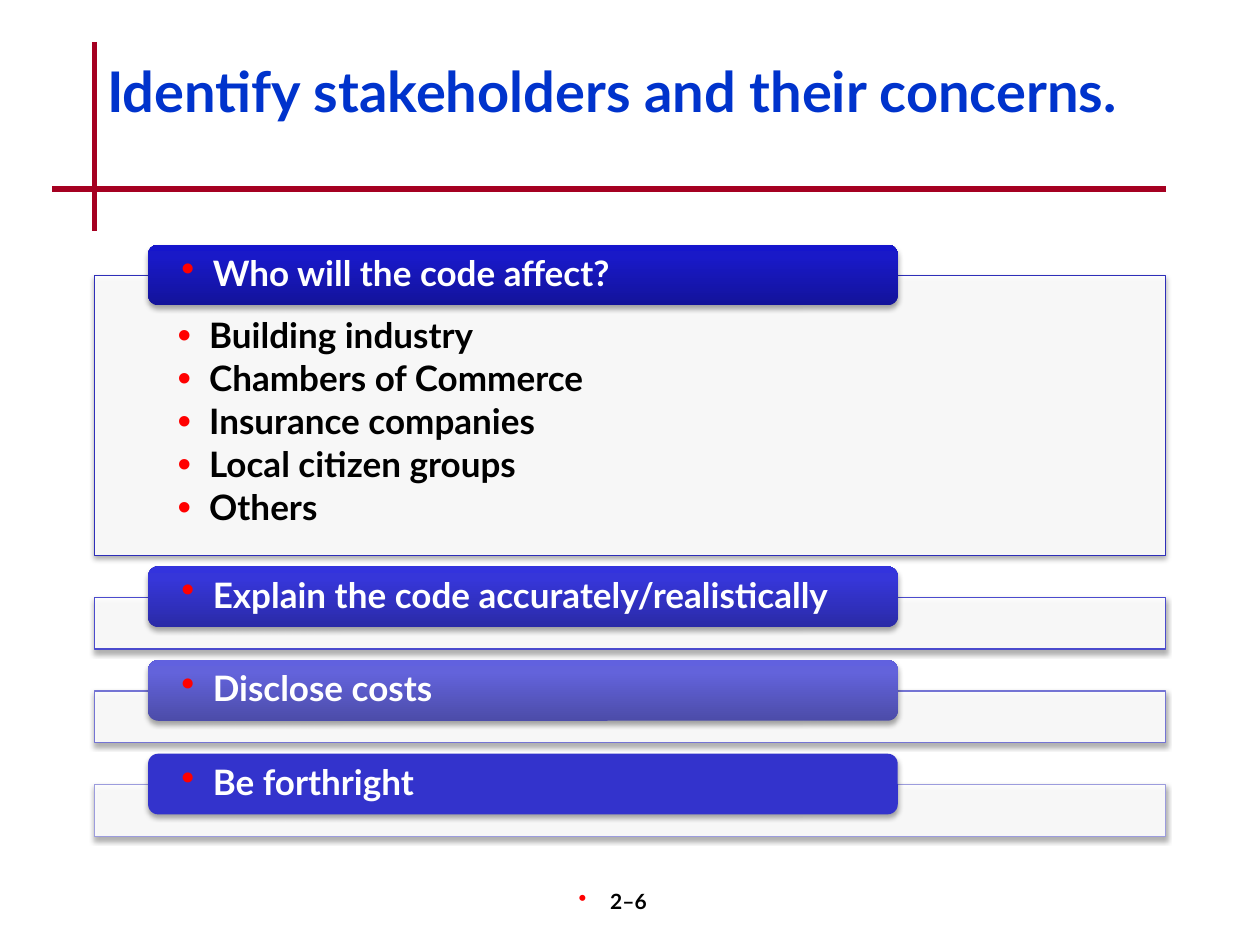
from copy import deepcopy

from lxml.etree import SubElement
from pptx import Presentation
from pptx.dml.color import RGBColor
from pptx.enum.shapes import MSO_CONNECTOR, MSO_SHAPE
from pptx.enum.text import MSO_ANCHOR, MSO_AUTO_SIZE, PP_ALIGN
from pptx.oxml.ns import qn
from pptx.util import Pt

COLORS = {
    "rule": "A50021", "title": "0033CC", "bullet": "FF0000",
    "black": "000000", "white": "FFFFFF",
}
FONT = "Lato"
TITLE = "Identify stakeholders and their concerns."
PAGE_NUMBER = "2–6"

# Each section: heading, list items, panel height, panel line, heading fill
SECTIONS = [
    ("Who will the code affect?",
     ["Building industry", "Chambers of Commerce", "Insurance companies",
      "Local citizen groups", "Others"],
     160, "2E2EB9", ["13139A", "1919C8", "1515CC"]),
    ("Explain the code accurately/realistically", [],
     29.6, "4B4BCD", ["2A2AA7", "3636D9", "3333DD"]),
    ("Disclose costs", [],
     29.6, "7474D4", ["4C4CA9", "6363DB", "6161DF"]),
    ("Be forthright", [],
     29.6, "9C9CDD", ["3333CC"]),
]
GRADIENT_POSITIONS = [0, 0.8, 1]
HEADING_HEIGHT = 34.7
HEADING_RISE = 17.6
SECTION_GAP = 6.3


def rgb(name):
    return RGBColor.from_string(COLORS.get(name, name))


def set_values(target, values):
    for name, value in values.items():
        setattr(target, name, value)


def place(shape, left, top, width, height):
    set_values(shape, {"left": Pt(left), "top": Pt(top),
                       "width": Pt(width), "height": Pt(height)})


def set_frame(frame, anchor, left, top, right, bottom):
    set_values(frame, {
        "word_wrap": True, "auto_size": MSO_AUTO_SIZE.NONE,
        "vertical_anchor": anchor,
        "margin_left": Pt(left), "margin_top": Pt(top),
        "margin_right": Pt(right), "margin_bottom": Pt(bottom),
    })


def add_bullet(para):
    properties = para._p.get_or_add_pPr()
    properties.set("marL", str(Pt(18)))
    properties.set("indent", str(Pt(-18)))
    color = SubElement(properties, qn("a:buClr"))
    SubElement(color, qn("a:srgbClr"), val=COLORS["bullet"])
    SubElement(properties, qn("a:buSzPct"), val="110000")
    SubElement(properties, qn("a:buChar"), char="•")


def write(para, text, size, color, bullet=True, **layout):
    if bullet:
        add_bullet(para)
    set_values(para, {"alignment": PP_ALIGN.LEFT, "space_before": Pt(0), **layout})
    span = para.add_run()
    span.text = text
    set_values(span.font, {"name": FONT, "size": Pt(size), "bold": True})
    span.font.color.rgb = rgb(color)


def add_shadow(shape):
    shape.shadow.inherit = False
    effects = shape.element.spPr.find(qn("a:effectLst"))
    shadow = SubElement(effects, qn("a:outerShdw"), blurRad=str(Pt(3.1)),
                        dist=str(Pt(1.8)), dir="5400000", rotWithShape="0")
    color = SubElement(shadow, qn("a:srgbClr"), val=COLORS["black"])
    SubElement(color, qn("a:alpha"), val="35000")


def fill_heading(shape, colors):
    if len(colors) == 1:
        shape.fill.solid()
        shape.fill.fore_color.rgb = rgb(colors[0])
        return
    shape.fill.gradient()
    shape.fill.gradient_angle = 90
    first_stop = shape.element.spPr.find(".//" + qn("a:gs"))
    first_stop.addnext(deepcopy(first_stop))
    for stop, position, color in zip(shape.fill.gradient_stops, GRADIENT_POSITIONS, colors):
        stop.position = position
        stop.color.rgb = rgb(color)


def add_rules(page):
    for start_x, start_y, end_x, end_y in [(54, 24, 54, 132), (30, 108, 666, 108)]:
        rule = page.shapes.add_connector(
            MSO_CONNECTOR.STRAIGHT, Pt(start_x), Pt(start_y), Pt(end_x), Pt(end_y))
        rule.line.color.rgb = rgb("rule")
        rule.line.width = Pt(3)
        SubElement(rule.element.spPr, qn("a:effectLst"))


def add_title(page, left, top, width, height):
    box = page.shapes.title
    place(box, left, top, width, height)
    set_frame(box.text_frame, MSO_ANCHOR.TOP, 7.2, 3.6, 7.2, 3.6)
    write(box.text_frame.paragraphs[0], TITLE, 32, "title", bullet=False, line_spacing=0.8)


def add_panel(page, line_color, left, top, width, height):
    panel = page.shapes.add_shape(
        MSO_SHAPE.RECTANGLE, Pt(left), Pt(top), Pt(width), Pt(height))
    panel.fill.solid()
    panel.fill.fore_color.rgb = rgb("white")
    SubElement(panel.element.spPr.find(".//" + qn("a:srgbClr")), qn("a:alpha"), val="90000")
    panel.line.color.rgb = rgb(line_color)
    panel.line.width = Pt(0.75)
    add_shadow(panel)
    return panel


def add_heading(page, text, colors, left, top, width, height):
    heading = page.shapes.add_shape(
        MSO_SHAPE.ROUNDED_RECTANGLE, Pt(left), Pt(top), Pt(width), Pt(height))
    fill_heading(heading, colors)
    heading.line.fill.background()
    add_shadow(heading)
    set_frame(heading.text_frame, MSO_ANCHOR.MIDDLE, 17.3, 0, 17.3, 0)
    write(heading.text_frame.paragraphs[0], text, 20, "white", line_spacing=0.9)


def add_list(box, items, left, top, width, height):
    place(box, left, top, width, height)
    frame = box.text_frame
    set_frame(frame, MSO_ANCHOR.TOP, 47.5, 24.5, 47.5, 11.5)
    for index, item in enumerate(items):
        para = frame.add_paragraph() if index else frame.paragraphs[0]
        write(para, item, 20, "black", line_spacing=0.9, space_after=Pt(3))


def add_sections(page, left, top, width):
    for text, items, height, line_color, colors in SECTIONS:
        area = (left, top + HEADING_RISE, width, height)
        panel = add_panel(page, line_color, *area)
        if items:
            body = page.placeholders[1]
            add_list(body, items, *area)
            panel.element.addnext(body.element)  # list goes in front of its panel
        add_heading(page, text, colors, left + width * 0.05, top, width * 0.7, HEADING_HEIGHT)
        top += HEADING_RISE + height + SECTION_GAP


def add_page_number(page, left, top, width, height):
    box = page.shapes.add_textbox(Pt(left), Pt(top), Pt(width), Pt(height))
    set_frame(box.text_frame, MSO_ANCHOR.TOP, 0, 3.6, 13.7, 3.6)
    write(box.text_frame.paragraphs[0], PAGE_NUMBER, 12, "black", alignment=PP_ALIGN.CENTER)


def main():
    deck = Presentation()
    set_values(deck, {"slide_width": Pt(720), "slide_height": Pt(540)})
    page = deck.slides.add_slide(deck.slide_layouts[1])
    add_rules(page)
    add_title(page, 54, 36, 612, 72)
    add_sections(page, 54, 139.8, 612)
    add_page_number(page, 282, 504, 150, 36)
    deck.save("out.pptx")


if __name__ == "__main__":
    main()
